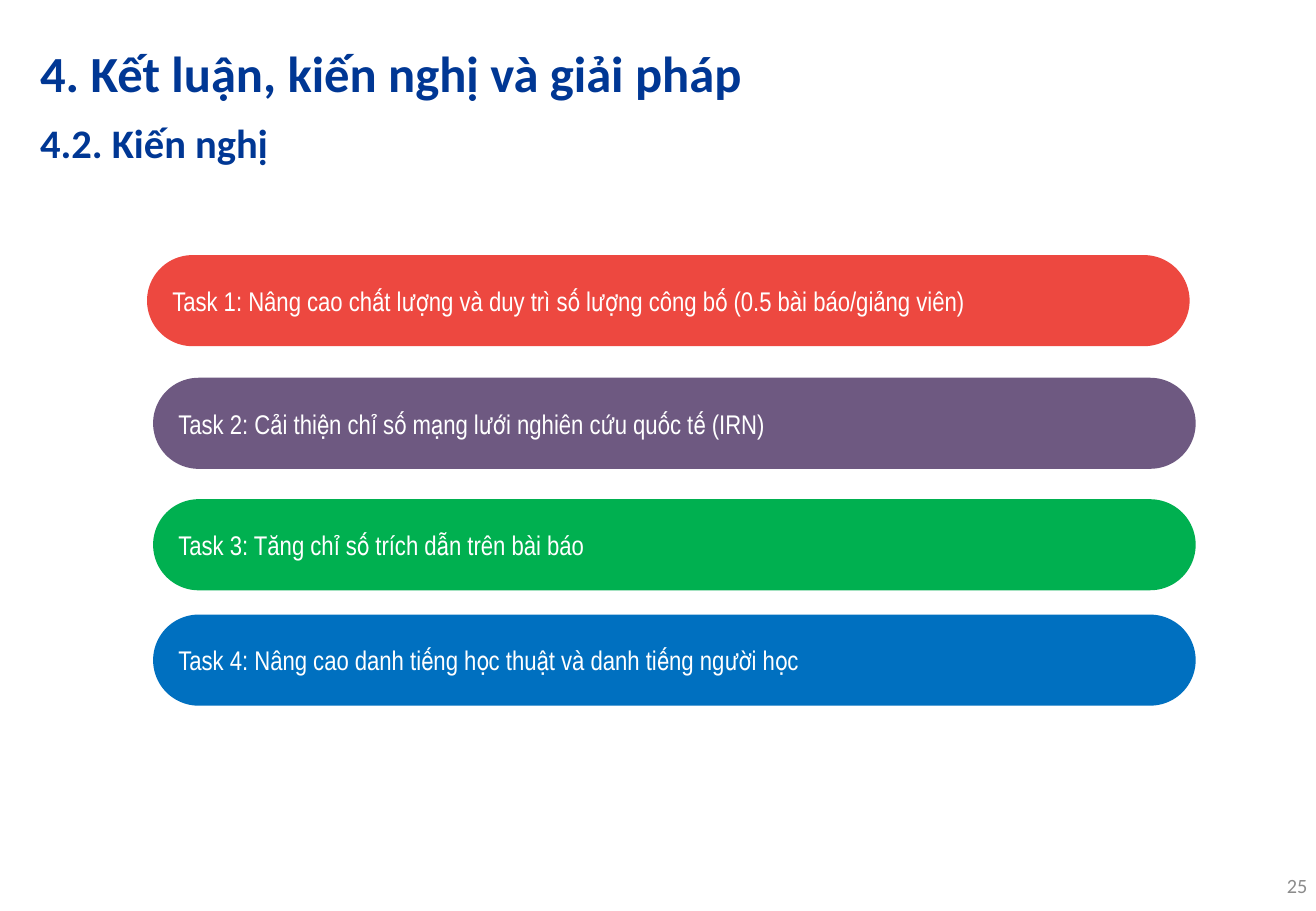
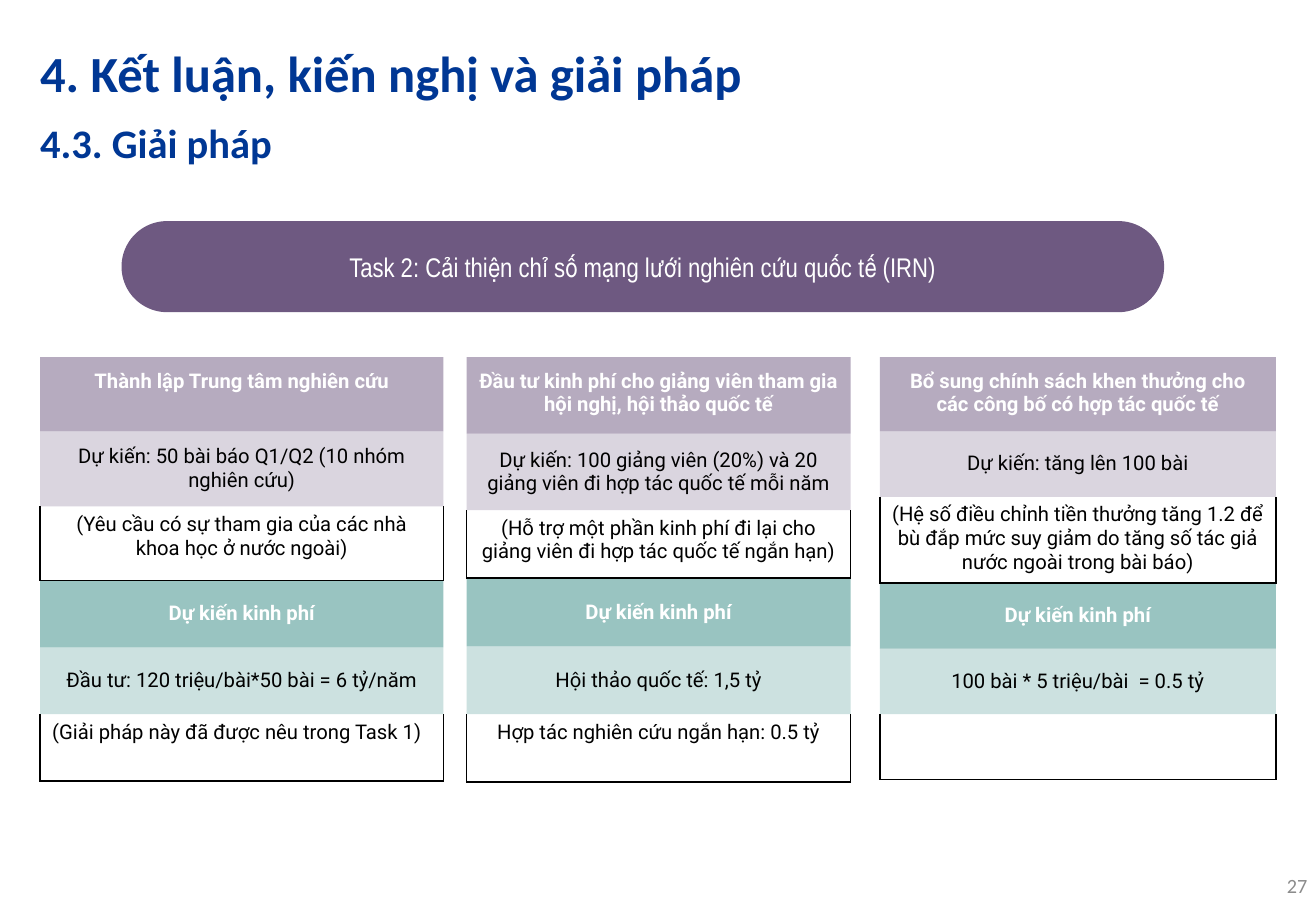
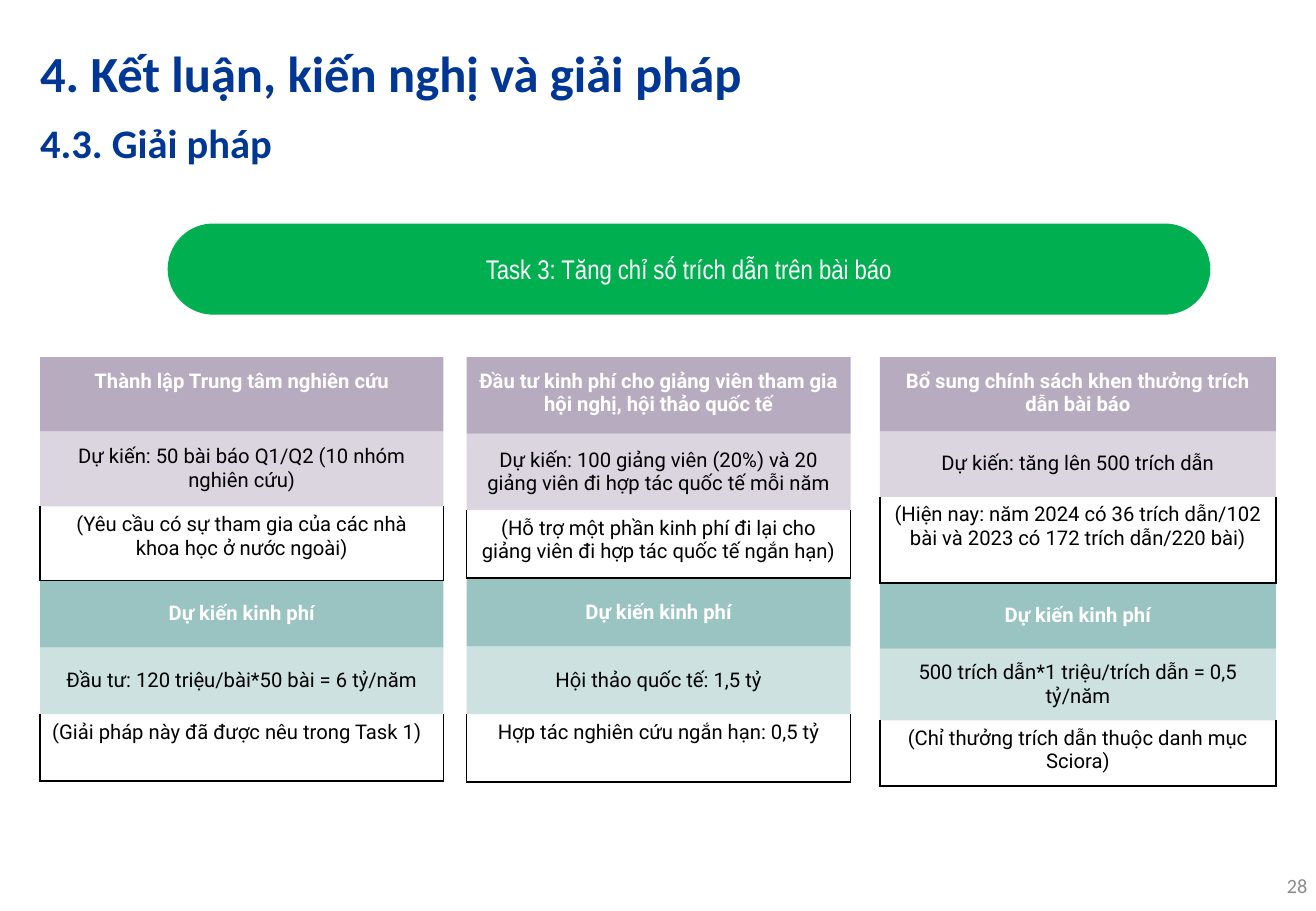
from lxml import etree
from pptx import Presentation
from pptx.dml.color import RGBColor
from pptx.enum.shapes import MSO_SHAPE
from pptx.enum.text import MSO_ANCHOR, MSO_AUTO_SIZE, PP_ALIGN
from pptx.oxml.ns import qn
from pptx.util import Inches, Pt

LEFT, CENTER, RIGHT = PP_ALIGN.LEFT, PP_ALIGN.CENTER, PP_ALIGN.RIGHT
TOP, MIDDLE = MSO_ANCHOR.TOP, MSO_ANCHOR.MIDDLE
NO_AUTOFIT = MSO_AUTO_SIZE.NONE
ROUNDED = MSO_SHAPE.ROUNDED_RECTANGLE

# Shared style
NAVY, GRAY, WHITE, BLACK = "003794", "8C8C8C", "FFFFFF", "000000"
RED, PURPLE, GREEN, BLUE, TEAL = "ED4840", "6E5981", "00B050", "0070C0", "358A84"
HEADING_FONT, TASK_FONT, TABLE_FONT = "Calibri", "Arial Narrow", "Roboto"
NO_GRID_STYLE = "{2D5ABB26-0587-4C30-8999-92F81FD0307C}"
DECK_TITLE = "4. Kết luận, kiến nghị và giải pháp"

TASKS = {
    1: ("Task 1: Nâng cao chất lượng và duy trì số lượng công bố "
        "(0.5 bài báo/giảng viên)", RED),
    2: ("Task 2: Cải thiện chỉ số mạng lưới nghiên cứu quốc tế (IRN)", PURPLE),
    3: ("Task 3: Tăng chỉ số trích dẫn trên bài báo", GREEN),
    4: ("Task 4: Nâng cao danh tiếng học thuật và danh tiếng người học", BLUE),
}

# Solution tables: left, width, row heights
TABLE_TOP = 2.94
CENTER_COLUMN = (0.33, 3.32, (0.61, 0.62, 0.61, 0.55, 0.55, 0.55))
FUNDING_COLUMN = (3.84, 3.16, (0.63, 0.63, 0.56, 0.56, 0.56, 0.56))
REWARD_COLUMN = (7.24, 3.26, (0.61, 0.54, 0.71, 0.54, 0.54, 0.54))

# Row styles: fill, opacity in percent, font colour, bold, anchor, vertical inset
ROW_STYLES = (
    (PURPLE, 50, WHITE, True, TOP, 0.1),
    (PURPLE, 25, BLACK, False, MIDDLE, 0.1),
    (None, 0, BLACK, False, TOP, 0.05),
    (TEAL, 50, WHITE, True, MIDDLE, 0.1),
    (TEAL, 25, BLACK, False, MIDDLE, 0.1),
    (None, 0, BLACK, False, TOP, 0.05),
)
BUDGET = "Dự kiến kinh phí"


def color(hex_value):
    return RGBColor.from_string(hex_value)


def style_paragraph(paragraph, font_name, size, hex_value, bold=False, align=LEFT):
    paragraph.alignment = align
    font = paragraph.font
    font.name, font.size, font.bold = font_name, Pt(size), bold
    font.color.rgb = color(hex_value)


def set_text(shape, text, font_name, size, hex_value, bold=False, align=LEFT, inset=0):
    frame = shape.text_frame
    frame.text = text
    frame.word_wrap = True
    frame.auto_size = NO_AUTOFIT
    frame.vertical_anchor = MIDDLE
    frame.margin_left = frame.margin_right = Inches(inset)
    frame.margin_top = frame.margin_bottom = Inches(inset)
    style_paragraph(frame.paragraphs[0], font_name, size, hex_value, bold, align)


def add_text(slide, text, left, top, width, height, size, hex_value, **options):
    box = slide.shapes.add_textbox(
        Inches(left), Inches(top), Inches(width), Inches(height))
    set_text(box, text, HEADING_FONT, size, hex_value, **options)


def add_section_slide(presentation, subtitle, number):
    """Title, subtitle and page number common to every slide."""
    slide = presentation.slides.add_slide(presentation.slide_layouts[5])
    title = slide.shapes.title
    title.left, title.top = Inches(0.33), Inches(0.26)
    title.width, title.height = Inches(10.26), Inches(0.67)
    set_text(title, DECK_TITLE, HEADING_FONT, 30, NAVY, bold=True)
    add_text(slide, subtitle, 0.33, 0.84, 10.26, 0.67, 24, NAVY, bold=True)
    add_text(slide, str(number), 8.86, 7.09, 1.9, 0.39, 12, GRAY, align=RIGHT)
    return slide


def add_task_pill(slide, task, left, top, align=CENTER):
    text, fill = TASKS[task]
    pill = slide.shapes.add_shape(
        ROUNDED, Inches(left), Inches(top), Inches(8.58), Inches(0.75))
    pill.adjustments[0] = 0.5
    pill.shadow.inherit = False
    pill.fill.solid()
    pill.fill.fore_color.rgb = color(fill)
    pill.line.fill.background()
    set_text(pill, text, TASK_FONT, 16, WHITE, align=align, inset=0.1)


def fill_cell(cell, hex_value, opacity):
    cell.fill.solid()
    cell.fill.fore_color.rgb = color(hex_value)
    rgb = cell._tc.tcPr.find(".//" + qn("a:srgbClr"))
    etree.SubElement(rgb, qn("a:alpha"), val=str(opacity * 1000))


def outline_cell(cell):
    """Black line at the left, right and bottom of an unfilled cell."""
    properties = cell._tc.get_or_add_tcPr()
    for side in ("a:lnL", "a:lnR", "a:lnB"):
        line = etree.SubElement(properties, qn(side), w=str(Pt(1)))
        solid = etree.SubElement(line, qn("a:solidFill"))
        etree.SubElement(solid, qn("a:srgbClr"), val=BLACK)
    cell.fill.background()


def add_solution_table(slide, column, texts, last_align=CENTER):
    left, width, heights = column
    table = slide.shapes.add_table(
        len(heights), 1, Inches(left), Inches(TABLE_TOP),
        Inches(width), Inches(sum(heights))).table
    table._tbl.tblPr.find(qn("a:tableStyleId")).text = NO_GRID_STYLE
    table.first_row = table.horz_banding = False
    aligns = [CENTER] * (len(heights) - 1) + [last_align]
    for index, (height, text, style, align) in enumerate(
            zip(heights, texts, ROW_STYLES, aligns)):
        fill, opacity, font_color, bold, anchor, inset = style
        table.rows[index].height = Inches(height)
        cell = table.cell(index, 0)
        cell.text = text
        cell.vertical_anchor = anchor
        cell.margin_left = cell.margin_right = Inches(0.1)
        cell.margin_top = cell.margin_bottom = Inches(inset)
        style_paragraph(cell.text_frame.paragraphs[0], TABLE_FONT, 12,
                        font_color, bold, align)
        if fill:
            fill_cell(cell, fill, opacity)
        else:
            outline_cell(cell)


def add_solution_slide(presentation, number, task, pill_at, short_term, reward):
    slide = add_section_slide(presentation, "4.3. Giải pháp", number)
    add_solution_table(slide, FUNDING_COLUMN, (
        "Đầu tư kinh phí cho giảng viên tham gia hội nghị, hội thảo quốc tế",
        "Dự kiến: 100 giảng viên (20%) và 20 giảng viên đi hợp tác quốc tế mỗi năm",
        "(Hỗ trợ một phần kinh phí đi lại cho giảng viên đi hợp tác quốc tế ngắn hạn)",
        BUDGET,
        "Hội thảo quốc tế: 1,5 tỷ",
        f"Hợp tác nghiên cứu ngắn hạn: {short_term} tỷ",
    ))
    add_solution_table(slide, CENTER_COLUMN, (
        "Thành lập Trung tâm nghiên cứu",
        "Dự kiến: 50 bài báo Q1/Q2 (10 nhóm nghiên cứu)",
        "(Yêu cầu có sự tham gia của các nhà khoa học ở nước ngoài)",
        BUDGET,
        "Đầu tư: 120 triệu/bài*50 bài = 6 tỷ/năm",
        "(Giải pháp này đã được nêu trong Task 1)",
    ), last_align=LEFT)
    add_solution_table(slide, REWARD_COLUMN, reward)
    add_task_pill(slide, task, *pill_at)


def main():
    presentation = Presentation()
    presentation.slide_width = Inches(10.83)
    presentation.slide_height = Inches(7.5)

    # Recommendations
    slide = add_section_slide(presentation, "4.2. Kiến nghị", 25)
    positions = ((1.21, 2.1), (1.26, 3.11), (1.26, 4.11), (1.26, 5.06))
    for task, (left, top) in zip(TASKS, positions):
        add_task_pill(slide, task, left, top, LEFT)

    # Solutions for task 2
    add_solution_slide(presentation, 27, 2, (1, 1.82), "0.5", (
        "Bổ sung chính sách khen thưởng cho các công bố có hợp tác quốc tế",
        "Dự kiến: tăng lên 100 bài",
        "(Hệ số điều chỉnh tiền thưởng tăng 1.2 để bù đắp mức suy giảm "
        "do tăng số tác giả nước ngoài trong bài báo)",
        BUDGET,
        "100 bài * 5 triệu/bài  = 0.5 tỷ",
        "",
    ))

    # Solutions for task 3
    add_solution_slide(presentation, 28, 3, (1.38, 1.84), "0,5", (
        "Bổ sung chính sách khen thưởng trích dẫn bài báo",
        "Dự kiến: tăng lên 500 trích dẫn",
        "(Hiện nay: năm 2024 có 36 trích dẫn/102 bài và 2023 có 172 trích dẫn/220 bài)",
        BUDGET,
        "500 trích dẫn*1 triệu/trích dẫn = 0,5 tỷ/năm",
        "(Chỉ thưởng trích dẫn thuộc danh mục Sciora)",
    ))
    presentation.save("out.pptx")


if __name__ == "__main__":
    main()
